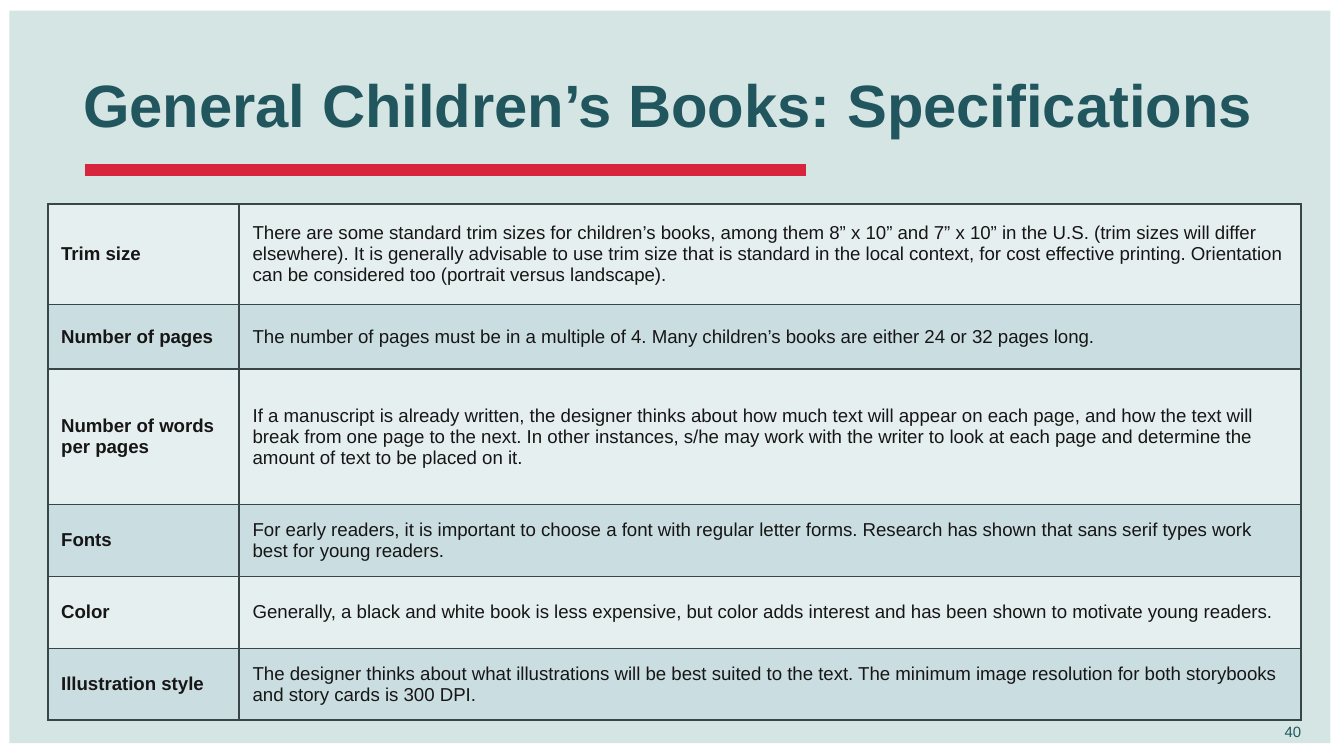
from lxml import etree
from pptx import Presentation
from pptx import util as u
from pptx.dml.color import RGBColor
from pptx.enum import shapes, text
from pptx.oxml import parse_xml
from pptx.oxml.ns import nsdecls, qn

PX = 4572  # EMU in one px, 200 px to the inch
FONT = "Arial"
SAGE = RGBColor(0xAA, 0xCC, 0xC9)
RED = RGBColor(0xD8, 0x25, 0x3D)
TEAL = RGBColor(0x21, 0x56, 0x5E)
PAGE = RGBColor(0x20, 0x57, 0x5E)
INK = RGBColor(0x17, 0x16, 0x16)
EDGE = RGBColor(0x38, 0x46, 0x48)
BANDS = RGBColor(0xE6, 0xEF, 0xF0), RGBColor(0xCA, 0xDD, 0xE1)

ROWS = [
    (149, "Trim size",
     "There are some standard trim sizes for children’s books, among them 8” x 10” and "
     "7” x 10” in the U.S. (trim sizes will differ elsewhere). It is generally advisable "
     "to use trim size that is standard in the local context, for cost effective printing. "
     "Orientation can be considered too (portrait versus landscape)."),
    (96, "Number of pages",
     "The number of pages must be in a multiple of 4. Many children’s books are either "
     "24 or 32 pages long."),
    (202, "Number of words per pages",
     "If a manuscript is already written, the designer thinks about how much text will "
     "appear on each page, and how the text will break from one page to the next. In other "
     "instances, s/he may work with the writer to look at each page and determine the "
     "amount of text to be placed on it."),
    (107, "Fonts",
     "For early readers, it is important to choose a font with regular letter forms. "
     "Research has shown that sans serif types work best for young readers."),
    (107, "Color",
     "Generally, a black and white book is less expensive, but color adds interest and "
     "has been shown to motivate young readers."),
    (107, "Illustration style",
     "The designer thinks about what illustrations will be best suited to the text. The "
     "minimum image resolution for both storybooks and story cards is 300 DPI."),
]


def write(frame, words, size=10, color=INK, bold=False, space=None):
    frame.word_wrap = True
    para = frame.paragraphs[0]
    para.line_spacing = space
    run = para.add_run()
    run.text = words
    font = run.font
    font.name, font.size, font.bold = FONT, u.Pt(size), bold
    font.color.rgb = color


class Deck:
    def __init__(self, wide, high):
        self.prs = Presentation()
        self.prs.slide_width, self.prs.slide_height = wide * PX, high * PX
        self.slide = self.prs.slides.add_slide(self.prs.slide_layouts[6])
        self.shapes = self.slide.shapes

    def panel(self, *box, color, alpha):
        rect = self.shapes.add_shape(
            shapes.MSO_SHAPE.RECTANGLE, *(n * PX for n in box))
        rect.shadow.inherit = False
        rect.fill.solid()
        rect.fill.fore_color.rgb = color
        rect.line.fill.background()
        tone = rect._element.spPr.find(qn("a:solidFill"))[0]
        etree.SubElement(tone, qn("a:alpha")).set("val", str(alpha * 1000))

    def rule(self, *ends, color, width):
        line = self.shapes.add_connector(
            shapes.MSO_CONNECTOR.STRAIGHT, *(n * PX for n in ends))
        line.line.color.rgb = color
        line.line.width = u.Pt(width)
        etree.SubElement(line._element.spPr, qn("a:effectLst"))

    def label(self, *box, words, anchor=text.MSO_ANCHOR.TOP, **style):
        frame = self.shapes.add_textbox(*(n * PX for n in box)).text_frame
        frame.vertical_anchor = anchor
        write(frame, words, **style)

    def border(self, cell):
        props = cell._tc.get_or_add_tcPr()
        for spot, side in enumerate("LRTB"):
            props.insert(spot, parse_xml(
                f'<a:ln{side} {nsdecls("a")} w="{u.Pt(1)}"><a:solidFill>'
                f'<a:srgbClr val="{EDGE}"/></a:solidFill></a:ln{side}>'))

    def table(self, left, top, cols, rows):
        high = sum(row[0] for row in rows)
        grid = self.shapes.add_table(
            len(rows), len(cols), left * PX, top * PX, sum(cols) * PX, high * PX).table
        for col, wide in zip(grid.columns, cols):
            col.width = wide * PX
        for i, (tall, *words) in enumerate(rows):
            grid.rows[i].height = tall * PX
            for j, part in enumerate(words):
                cell = grid.cell(i, j)
                cell.vertical_anchor = text.MSO_ANCHOR.MIDDLE
                cell.fill.solid()
                cell.fill.fore_color.rgb = BANDS[i % 2]
                self.border(cell)
                write(cell.text_frame, part, bold=j == 0)


def main():
    deck = Deck(2000, 1125)

    # Backdrop, title and red rule
    deck.panel(14, 16, 1966, 1090, color=SAGE, alpha=50)
    deck.rule(126, 253, 1200, 253, color=RED, width=6.5)
    deck.label(104, 52, 1798, 218, words="General Children’s Books: Specifications",
               anchor=text.MSO_ANCHOR.MIDDLE, size=32, color=TEAL, bold=True, space=0.9)

    # Specifications
    deck.table(71, 304, (285, 1580), ROWS)

    # Page number
    deck.label(1892, 1066, 70, 48, words="40", size=8, color=PAGE)

    deck.prs.save("out.pptx")


if __name__ == "__main__":
    main()
